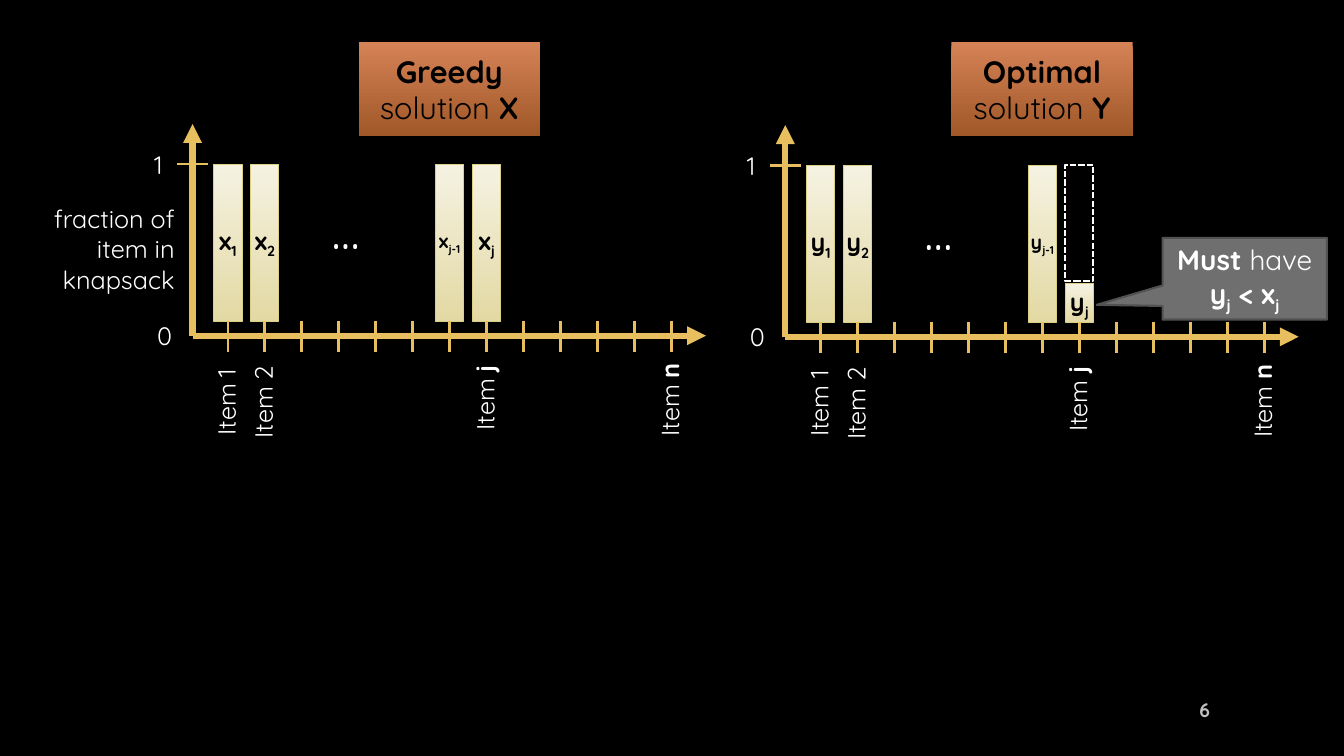
from dataclasses import dataclass
from typing import NamedTuple, Optional

from pptx import Presentation
from pptx.dml.color import RGBColor
from pptx.enum.dml import MSO_LINE
from pptx.enum.shapes import MSO_CONNECTOR, MSO_SHAPE
from pptx.enum.text import MSO_ANCHOR, PP_ALIGN
from pptx.oxml.ns import qn
from pptx.util import Inches, Pt
from lxml import etree

RECT, CALLOUT = MSO_SHAPE.RECTANGLE, MSO_SHAPE.RECTANGULAR_CALLOUT
STRAIGHT = MSO_CONNECTOR.STRAIGHT
LEFT, CENTER, RIGHT = PP_ALIGN.LEFT, PP_ALIGN.CENTER, PP_ALIGN.RIGHT
TOP, MIDDLE = MSO_ANCHOR.TOP, MSO_ANCHOR.MIDDLE
DASH = MSO_LINE.SQUARE_DOT
BOTTOM_SIDE = 2

FONT = "Quicksand"
BLACK = RGBColor(0x00, 0x00, 0x00)
WHITE = RGBColor(0xFF, 0xFF, 0xFF)
GOLD = RGBColor(0xE7, 0xBF, 0x5F)
BAR_EDGE = RGBColor(0xDC, 0xD0, 0x84)
BAR_FILL = RGBColor(0xF5, 0xF2, 0xE2), RGBColor(0xE3, 0xD9, 0xA4)
HEADING_FILL = RGBColor(0xD4, 0x82, 0x56), RGBColor(0xA1, 0x58, 0x28)
CALLOUT_FILL = RGBColor(0x6F, 0x6F, 0x6F)
CALLOUT_EDGE = RGBColor(0x52, 0x52, 0x52)
NUMBER_GREY = RGBColor(0xBF, 0xBF, 0xBF)

# All lengths below are percentages of the slide's width (x) or height (y)
TICKS, FIRST_TICK, PITCH = 13, 2.63, 2.75
TICK_UP, TICK_DOWN = 1.9, 2.2
BAR_W, BAR_H, SHORT_BAR_H, DASHED_H = 2.1, 20.8, 5.1, 15.33
BAR_TOP = TICK_UP + BAR_H
AXIS_W, AXIS_H, ONE_TICK = 38.2, 28, 1.16
LINE_H = 5.33


class Run(NamedTuple):
    text: str
    bold: bool = False
    sub: bool = False


class Box(NamedTuple):
    x: float
    y: float
    w: float
    h: float


@dataclass
class Bar:
    tick: int
    sub: str
    size: int = 18
    height: float = BAR_H


@dataclass
class ItemLabel:
    tick: int
    runs: list[Run]
    drop: float
    width: float


@dataclass
class Plot:
    x: float
    y: float
    heading: list[Run]
    letter: str
    bars: list[Bar]


ITEMS = [
    ItemLabel(0, [Run("Item 1")], 8.13, 7.2),
    ItemLabel(1, [Run("Item 2")], 8.53, 7.2),
    ItemLabel(7, [Run("Item "), Run("j", True)], 8, 6.6),
    ItemLabel(12, [Run("Item "), Run("n", True)], 8.2, 7.28),
]
FULL_BARS = [Bar(0, "1"), Bar(1, "2"), Bar(6, "j-1", 14)]
PLOTS = [
    Plot(14.33, 44.4, [Run("Greedy ", True), Run("solution"), Run(" X", True)],
         "x", FULL_BARS + [Bar(7, "j")]),
    Plot(58.43, 44.55, [Run("Optimal ", True), Run("solution"), Run(" Y", True)],
         "y", FULL_BARS + [Bar(7, "j", height=SHORT_BAR_H)]),
]

prs = Presentation()
prs.slide_width, prs.slide_height = Inches(13.33), Inches(7.5)
s = prs.slides.add_slide(prs.slide_layouts[6])
s.background.fill.solid()
s.background.fill.fore_color.rgb = BLACK


def px(share: float) -> int:
    return round(prs.slide_width * share / 100)


def py(share: float) -> int:
    return round(prs.slide_height * share / 100)


def emu(box: Box) -> tuple[int, int, int, int]:
    return px(box.x), py(box.y), px(box.w), py(box.h)


def write(sp, lines: list[list[Run]], size: int, color: RGBColor = WHITE,
          align=CENTER, anchor=MIDDLE, wrap: bool = True) -> None:
    tf = sp.text_frame
    tf.word_wrap, tf.vertical_anchor = wrap, anchor
    for i, runs in enumerate(lines):
        p = tf.add_paragraph() if i else tf.paragraphs[0]
        p.alignment = align
        for run in runs:
            r = p.add_run()
            r.text = run.text
            r.font.name, r.font.size, r.font.bold = FONT, Pt(size), run.bold
            r.font.color.rgb = color
            if run.sub:
                r.font._element.set("baseline", "-25000")


def add_text(box: Box, runs: list[Run], size: int = 18, color: RGBColor = WHITE,
             align=LEFT, anchor=TOP, wrap: bool = False):
    sp = s.shapes.add_textbox(*emu(box))
    write(sp, [runs], size, color, align, anchor, wrap)
    return sp


def add_box(box: Box, fill=None, edge: Optional[RGBColor] = None,
            width: float = 0.75, kind=RECT):
    """Draw a shape; fill is None, one colour, or a top and bottom colour."""
    sp = s.shapes.add_shape(kind, *emu(box))
    sp.shadow.inherit = False
    if fill is None:
        sp.fill.background()
    elif isinstance(fill, RGBColor):
        sp.fill.solid()
        sp.fill.fore_color.rgb = fill
    else:
        sp.fill.gradient()
        sp.fill.gradient_angle = 270
        for stop, color in zip(sp.fill.gradient_stops, fill):
            stop.color.rgb = color
    if edge is None:
        sp.line.fill.background()
    else:
        sp.line.color.rgb, sp.line.width = edge, Pt(width)
    return sp


def add_line(x1: float, y1: float, x2: float, y2: float,
             width: float = 2, arrow: bool = False):
    c = s.shapes.add_connector(STRAIGHT, px(x1), py(y1), px(x2), py(y2))
    c.line.color.rgb, c.line.width = GOLD, Pt(width)
    if arrow:
        etree.SubElement(c.line._get_or_add_ln(), qn("a:tailEnd"), type="triangle")
    etree.SubElement(c._element.spPr, qn("a:effectLst"))
    return c


def draw_plot(plot: Plot) -> None:
    x, y = plot.x, plot.y
    tick_x = [x + FIRST_TICK + i * PITCH for i in range(TICKS)]

    # Heading
    heading = add_box(Box(x + 12.35, 5.6, 13.5, 12.4), HEADING_FILL)
    write(heading, [plot.heading], 22, BLACK)

    # Axes
    add_line(x, y, x + AXIS_W, y, 4.5, arrow=True)
    add_line(x, y, x, y - AXIS_H, 4.5, arrow=True)
    add_line(x - ONE_TICK, y - BAR_TOP, x + ONE_TICK, y - BAR_TOP)
    add_text(Box(x - 3.37, y - 2.67, 2.55, LINE_H), [Run("0")])
    add_text(Box(x - 3.6, y - 25.33, 2.55, LINE_H), [Run("1")])

    # Bars
    bar_at = {}
    for bar in plot.bars:
        sp = add_box(Box(tick_x[bar.tick] - BAR_W / 2, y - TICK_UP - bar.height,
                         BAR_W, bar.height), BAR_FILL, BAR_EDGE)
        write(sp, [[Run(plot.letter, True), Run(bar.sub, True, True)]],
              bar.size, BLACK, wrap=False)
        bar_at[bar.tick] = sp
        if bar.height < BAR_H:
            gap = add_box(Box(tick_x[bar.tick] - BAR_W / 2, y - BAR_TOP,
                              BAR_W, DASHED_H), edge=WHITE, width=1.5)
            gap.line.dash_style = DASH
    add_text(Box(x + 9.6, y - 18.67, 5.33, 9.47), [Run("…")], 36)

    # Ticks and item labels
    for i, tx in enumerate(tick_x):
        tick = add_line(tx, y + TICK_DOWN, tx, y - TICK_UP)
        if i in bar_at:
            tick.end_connect(bar_at[i], BOTTOM_SIDE)
    for item in ITEMS:
        label = add_text(Box(tick_x[item.tick] - 0.15 - item.width / 2,
                             y + item.drop - LINE_H / 2, item.width, LINE_H), item.runs)
        label.rotation = 270


for plot in PLOTS:
    draw_plot(plot)

# Vertical axis caption
add_text(Box(2.1, 26.27, 11.63, 13.47), [Run("fraction of item in knapsack")],
         align=RIGHT, wrap=True)

# Callout on the shortened bar
callout = add_box(Box(86.5, 31.47, 12.23, 10.8), CALLOUT_FILL, CALLOUT_EDGE, 1.5, CALLOUT)
callout.adjustments[0], callout.adjustments[1] = -0.9, 0.32
write(callout, [[Run("Must ", True), Run("have")],
                [Run("y", True), Run("j", True, True),
                 Run(" < x", True), Run("j", True, True)]], 20)

# Slide number
add_text(Box(86.27, 91.2, 4.5, LINE_H), [Run("6", True)], 14, NUMBER_GREY,
         RIGHT, MIDDLE, True)

prs.save("out.pptx")
